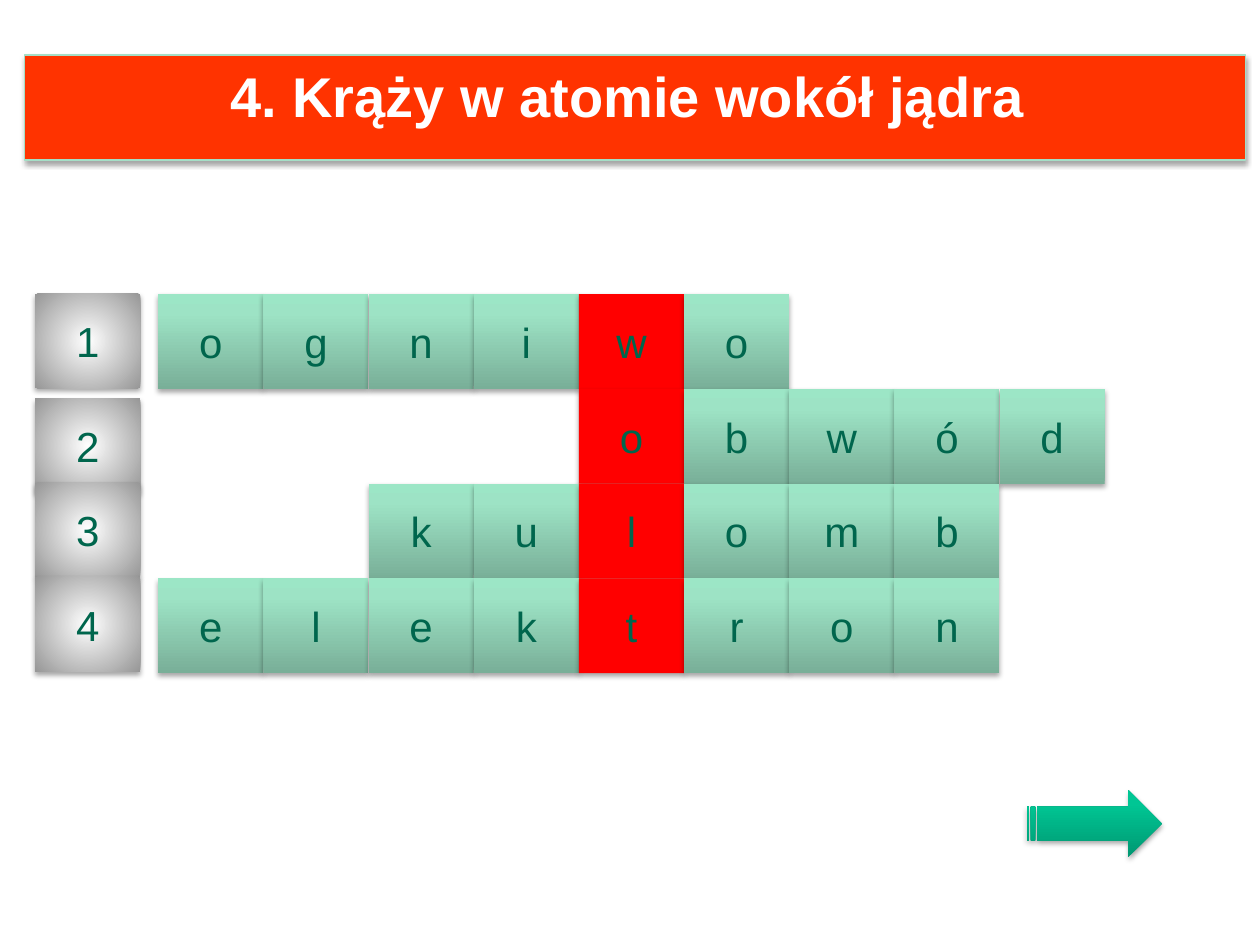
from dataclasses import dataclass

from pptx import Presentation
from pptx.dml.color import RGBColor
from pptx.enum.shapes import MSO_SHAPE
from pptx.enum.text import MSO_ANCHOR, MSO_AUTO_SIZE, PP_ALIGN
from pptx.oxml import parse_xml
from pptx.oxml.ns import nsdecls, qn
from pptx.util import Cm, Pt

RECTANGLE = MSO_SHAPE.RECTANGLE
STRIPED_ARROW = MSO_SHAPE.STRIPED_RIGHT_ARROW
CENTER = PP_ALIGN.CENTER
TOP = MSO_ANCHOR.TOP
MIDDLE = MSO_ANCHOR.MIDDLE
GROW = MSO_AUTO_SIZE.SHAPE_TO_FIT_TEXT
TITLE_ONLY = 5

COLORS = {
    "banner": "FF3300",
    "banner_line": "A5DEC6",
    "banner_text": "FFFFFF",
    "solution": "FF0000",
    "letter": "00664D",
    "shadow": "000000",
}
UPWARD = '<a:lin ang="16200000" scaled="0"/>'
RADIAL = ('<a:path path="circle"><a:fillToRect l="50000" t="50000" '
          'r="50000" b="50000"/></a:path>')


@dataclass(frozen=True)
class Gradient:
    stops: tuple[tuple[int, str], ...]
    direction: str


@dataclass(frozen=True)
class Answer:
    word: str
    first_column: int
    number_top: float


MINT = Gradient(((0, "79AF98"), (80, "9DE3C5"), (100, "9CE6C6")), UPWARD)
GREEN = Gradient(((0, "009872"), (80, "00C694"), (100, "00C795")), UPWARD)
SILVER = Gradient(((0, "FFFFFF"), (100, "979797")), RADIAL)

# Crossword grid, in centimetres
GRID_LEFT, GRID_TOP = 3.19, 5.93
CELL_WIDTH, CELL_HEIGHT = 2.12, 1.91
NUMBER_LEFT = 0.71
SOLUTION_COLUMN = 4
ANSWERS = [
    Answer("ogniwo", 0, 5.92),
    Answer("obwód", 4, 8.03),
    Answer("kulomb", 2, 9.73),
    Answer("elektron", 0, 11.63),
]

LETTER_FORMAT = {"name": "Arial", "size": Pt(24)}
TITLE_FORMAT = {"name": "Arial", "size": Pt(32), "bold": True}


def paint(shape, fill: str | Gradient) -> None:
    shape.fill.solid()
    if isinstance(fill, str):
        shape.fill.fore_color.rgb = RGBColor.from_string(fill)
        return
    stops = "".join(
        f'<a:gs pos="{position * 1000}"><a:srgbClr val="{color}"/></a:gs>'
        for position, color in fill.stops)
    gradient = parse_xml(
        f'<a:gradFill {nsdecls("a")} rotWithShape="1">'
        f'<a:gsLst>{stops}</a:gsLst>{fill.direction}</a:gradFill>')
    properties = shape.element.spPr
    properties.replace(properties.find(qn("a:solidFill")), gradient)


def cast_shadow(shape) -> None:
    shape.shadow.inherit = False
    shape.element.spPr.find(qn("a:effectLst")).append(parse_xml(
        f'<a:outerShdw {nsdecls("a")} blurRad="{Pt(3.1)}" dist="{Pt(1.8)}" '
        f'dir="5400000" rotWithShape="0"><a:srgbClr val="{COLORS["shadow"]}">'
        '<a:alpha val="35000"/></a:srgbClr></a:outerShdw>'))


def write(shape, text: str, color: str, font_format: dict) -> None:
    paragraph = shape.text_frame.paragraphs[0]
    paragraph.alignment = CENTER
    run = paragraph.add_run()
    run.text = text
    run.font.color.rgb = RGBColor.from_string(color)
    for attribute, value in font_format.items():
        setattr(run.font, attribute, value)


def add_block(slide, kind, left: float, top: float, width: float,
              height: float, fill: str | Gradient):
    block = slide.shapes.add_shape(
        kind, Cm(left), Cm(top), Cm(width), Cm(height))
    paint(block, fill)
    block.line.fill.background()
    cast_shadow(block)
    return block


def add_cell(slide, left: float, top: float, text: str,
             fill: str | Gradient) -> None:
    cell = add_block(slide, RECTANGLE, left, top, CELL_WIDTH, CELL_HEIGHT, fill)
    cell.text_frame.word_wrap = False
    cell.text_frame.vertical_anchor = MIDDLE
    write(cell, text, COLORS["letter"], LETTER_FORMAT)


def add_banner(slide, text: str) -> None:
    banner = slide.shapes.title
    banner.left, banner.top = Cm(0.5), Cm(1.11)
    banner.width, banner.height = Cm(24.61), Cm(1.63)
    paint(banner, COLORS["banner"])
    banner.line.color.rgb = RGBColor.from_string(COLORS["banner_line"])
    banner.line.width = Pt(0.75)
    cast_shadow(banner)
    banner.text_frame.vertical_anchor = TOP
    banner.text_frame.auto_size = GROW
    write(banner, text, COLORS["banner_text"], TITLE_FORMAT)


def add_answer(slide, row: int, answer: Answer) -> None:
    top = GRID_TOP + row * CELL_HEIGHT
    for column, letter in enumerate(answer.word, answer.first_column):
        fill = COLORS["solution"] if column == SOLUTION_COLUMN else MINT
        add_cell(slide, GRID_LEFT + column * CELL_WIDTH, top, letter, fill)


def main() -> None:
    presentation = Presentation()
    presentation.slide_width, presentation.slide_height = Cm(25.4), Cm(19.05)
    slide = presentation.slides.add_slide(
        presentation.slide_layouts[TITLE_ONLY])

    # Clue
    add_banner(slide, "4. Krąży w atomie wokół jądra ")

    # Answers and their numbers
    for row, answer in enumerate(ANSWERS):
        add_answer(slide, row, answer)
        add_cell(slide, NUMBER_LEFT, answer.number_top, str(row + 1), SILVER)

    # Arrow to the next clue
    add_block(slide, STRIPED_ARROW, 20.7, 15.93, 2.72, 1.35, GREEN)

    presentation.save("out.pptx")


if __name__ == "__main__":
    main()
